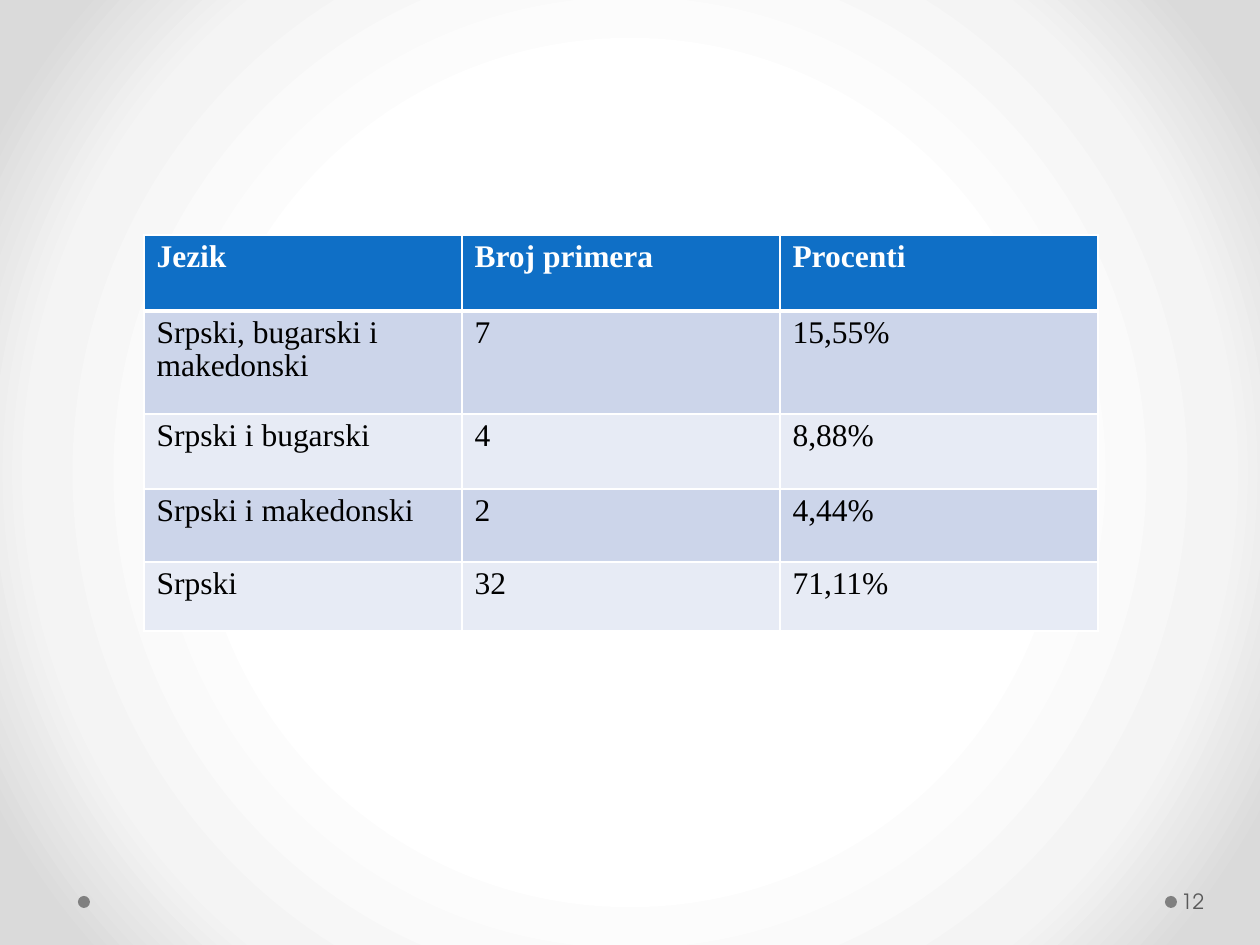
from dataclasses import dataclass
from pptx import Presentation
from pptx.dml.color import RGBColor
from pptx.enum.shapes import MSO_SHAPE as Preset
from pptx.enum.text import MSO_ANCHOR as Anchor
from pptx.oxml import parse_xml
from pptx.oxml.ns import nsdecls, qn
from pptx.util import Pt

HEADER = ("Jezik", "Broj primera", "Procenti")
LANGUAGES = [
    ("Srpski, bugarski i makedonski", "7", "15,55%"),
    ("Srpski i bugarski", "4", "8,88%"),
    ("Srpski i makedonski", "2", "4,44%"),
    ("Srpski", "32", "71,11%"),
]
PAGE_NUMBER = "12"

SLIDE_SIZE = (1260, 945)
TABLE_LEFT, TABLE_TOP = 144, 235
COLUMN_WIDTH = 318
ROW_HEIGHTS = (76, 103, 75, 73, 69)
DOT_LEFTS, DOT_TOP, DOT_SIZE = (1165, 78), 896, 12
NUMBER_BOX = (1177, 876, 77, 50)


@dataclass(frozen=True)
class Theme:
    table_font: str = "Times New Roman"
    number_font: str = "TeX Gyre Adventor"
    table_size: int = 18
    number_size: int = 12
    line_spacing: float = 0.95
    header_fill: str = "0F6FC6"
    header_text: str = "FFFFFF"
    body_text: str = "000000"
    bands: tuple = ("CCD5EA", "E7EBF5")
    border: str = "FFFFFF"
    dot: str = "808080"
    number: str = "595959"
    backdrop: tuple = ((50, "FFFFFF"), (76, "F4F4F4"), (92, "DADADA"))


THEME = Theme()


def px(value):
    return round(value * 914400 / 126)


def paint(fill, color):
    fill.solid()
    fill.fore_color.rgb = RGBColor.from_string(color)


def add_run(paragraph, text, font, size, color, bold=False):
    run = paragraph.add_run()
    run.text = text
    run.font.name = font
    run.font.size = Pt(size)
    run.font.bold = bold
    run.font.color.rgb = RGBColor.from_string(color)


def set_background(slide):
    slide.background.fill.gradient()
    gradient = slide.element.find(".//" + qn("a:gradFill"))
    stops = "".join(
        f'<a:gs pos="{position * 1000}"><a:srgbClr val="{color}"/></a:gs>'
        for position, color in THEME.backdrop
    )
    radial = parse_xml(
        f'<a:gradFill {nsdecls("a")} rotWithShape="1"><a:gsLst>{stops}</a:gsLst>'
        '<a:path path="circle"><a:fillToRect l="50000" t="50000" r="50000" b="50000"/>'
        "</a:path></a:gradFill>"
    )
    gradient.getparent().replace(gradient, radial)


def set_borders(cell, top, bottom):
    widths = {"lnL": 1, "lnR": 1, "lnT": top, "lnB": bottom}
    properties = cell._tc.get_or_add_tcPr()
    for index, (side, width) in enumerate(widths.items()):
        properties.insert(index, parse_xml(
            f'<a:{side} {nsdecls("a")} w="{Pt(width)}"><a:solidFill>'
            f'<a:srgbClr val="{THEME.border}"/></a:solidFill></a:{side}>'
        ))


def add_language_table(slide):
    rows = [HEADER, *LANGUAGES]
    table = slide.shapes.add_table(
        len(rows), len(HEADER), px(TABLE_LEFT), px(TABLE_TOP),
        px(COLUMN_WIDTH * len(HEADER)), px(sum(ROW_HEIGHTS)),
    ).table
    for column in table.columns:
        column.width = px(COLUMN_WIDTH)
    for row_index, (values, height) in enumerate(zip(rows, ROW_HEIGHTS)):
        table.rows[row_index].height = px(height)
        is_header = row_index == 0
        fill = THEME.header_fill if is_header else THEME.bands[(row_index - 1) % 2]
        color = THEME.header_text if is_header else THEME.body_text
        for column_index, value in enumerate(values):
            cell = table.cell(row_index, column_index)
            paint(cell.fill, fill)
            set_borders(cell, 3 if row_index == 1 else 1, 3 if is_header else 1)
            paragraph = cell.text_frame.paragraphs[0]
            paragraph.line_spacing = THEME.line_spacing
            add_run(paragraph, value, THEME.table_font, THEME.table_size, color, is_header)


def add_footer(slide):
    for left in DOT_LEFTS:
        dot = slide.shapes.add_shape(
            Preset.OVAL, px(left), px(DOT_TOP), px(DOT_SIZE), px(DOT_SIZE)
        )
        dot.shadow.inherit = False
        paint(dot.fill, THEME.dot)
        dot.line.fill.background()
    frame = slide.shapes.add_textbox(*map(px, NUMBER_BOX)).text_frame
    frame.word_wrap = True
    frame.vertical_anchor = Anchor.MIDDLE
    frame.margin_left = px(4)
    frame.margin_right = px(6)
    add_run(frame.paragraphs[0], PAGE_NUMBER, THEME.number_font,
            THEME.number_size, THEME.number)


def main():
    presentation = Presentation()
    presentation.slide_width, presentation.slide_height = map(px, SLIDE_SIZE)
    slide = presentation.slides.add_slide(presentation.slide_layouts[6])
    set_background(slide)
    add_footer(slide)
    add_language_table(slide)
    presentation.save("out.pptx")


if __name__ == "__main__":
    main()
